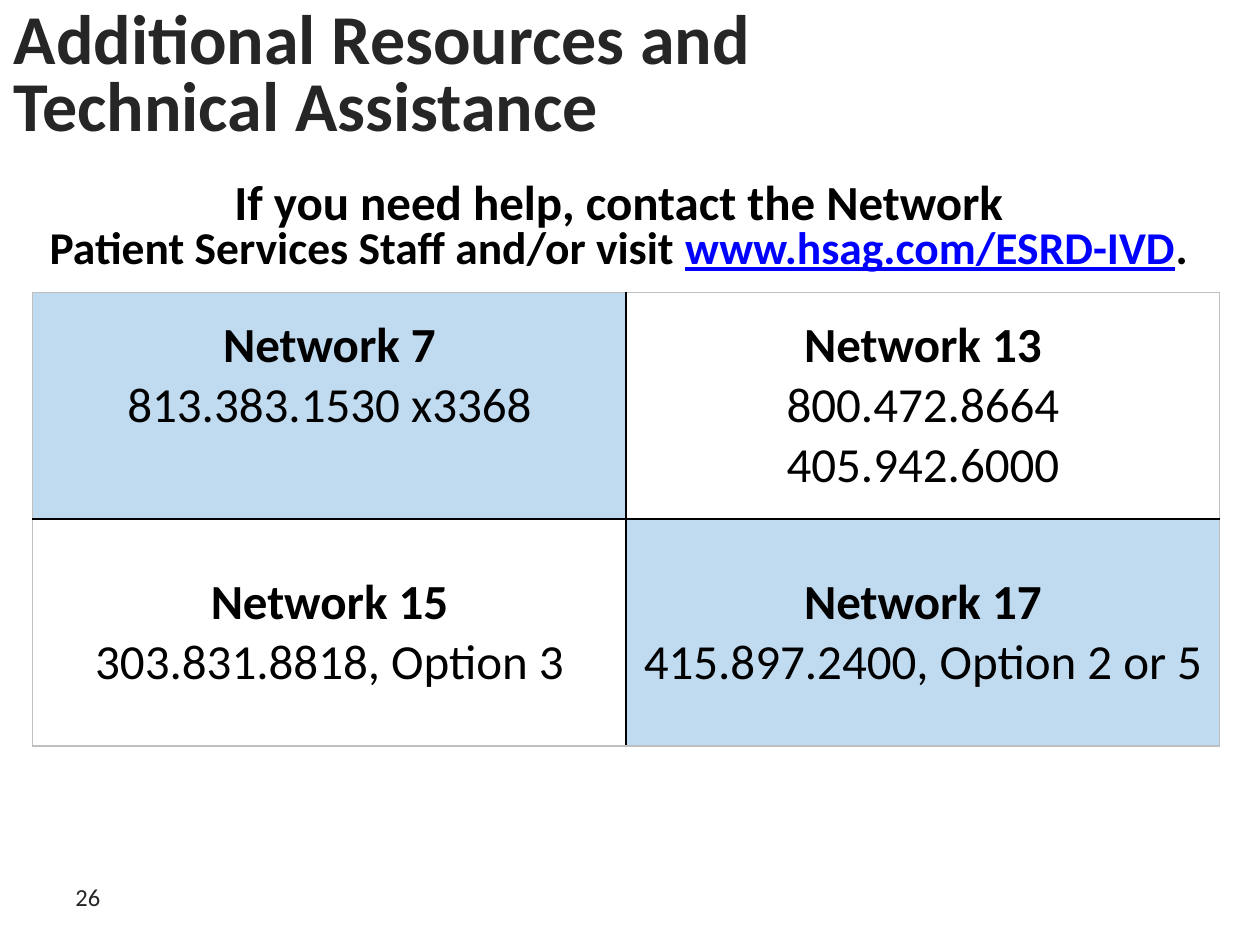
from dataclasses import dataclass

from lxml import etree
from pptx import Presentation
from pptx import util as u
from pptx.dml.color import RGBColor
from pptx.enum import text
from pptx.oxml.ns import qn


@dataclass(frozen=True)
class Theme:
    font: str = "Calibri"
    dark: str = "262626"
    black: str = "000000"
    link: str = "0000FF"
    tint: str = "C0DAEF"
    frame: str = "BFBFBF"
    title_size: int = 40
    body_size: int = 28
    intro_size: int = 26
    number_size: int = 14
    line_space: float = 0.8


class SlideBuilder:
    def __init__(self, page, theme):
        self.page = page
        self.theme = theme

    def style(self, font, size, color, bold=False, underline=False):
        font.name = self.theme.font
        font.size = u.Pt(size)
        font.color.rgb = RGBColor.from_string(color)
        font.bold = bold
        font.underline = underline

    def text_box(self, left, top, width, height, anchor):
        box = self.page.shapes.add_textbox(
            u.Inches(left), u.Inches(top), u.Inches(width), u.Inches(height))
        frame = box.text_frame
        frame.word_wrap = True
        frame.vertical_anchor = anchor
        return frame

    def label(self, content, place, size, bold=False, spacing=None, inset=0.1):
        frame = self.text_box(*place, text.MSO_ANCHOR.MIDDLE)
        frame.margin_left = frame.margin_right = u.Inches(inset)
        frame.text = content
        para = frame.paragraphs[0]
        para.line_spacing = spacing
        for span in para.runs:
            self.style(span.font, size, self.theme.dark, bold)

    def rich_lines(self, lines, place):
        """Centred bold lines, each a list of (text, size, color, underline)."""
        para = self.text_box(*place, text.MSO_ANCHOR.TOP).paragraphs[0]
        para.alignment = text.PP_ALIGN.CENTER
        para.line_spacing = self.theme.line_space
        for index, line in enumerate(lines):
            if index:
                para.add_line_break()
            for content, size, color, underline in line:
                span = para.add_run()
                span.text = content
                self.style(span.font, size, color, True, underline)

    def border(self, cell, side, color):
        line = etree.SubElement(cell._tc.get_or_add_tcPr(), qn(f"a:{side}"),
                                w=str(u.Pt(1)))
        fill = etree.SubElement(line, qn("a:solidFill"))
        etree.SubElement(fill, qn("a:srgbClr"), val=color)

    def contact_cell(self, cell, lines, tinted, inner_sides, blank_below):
        theme = self.theme
        # Borders come before the fill in the cell properties
        for side in ("lnL", "lnR", "lnT", "lnB"):
            self.border(cell, side,
                        theme.black if side in inner_sides else theme.frame)
        if tinted:
            cell.fill.solid()
            cell.fill.fore_color.rgb = RGBColor.from_string(theme.tint)
        else:
            cell.fill.background()
        cell.vertical_anchor = text.MSO_ANCHOR.MIDDLE
        cell.margin_bottom = u.Inches(0.05 + blank_below)
        cell.text_frame.text = "\n".join(lines)
        for index, para in enumerate(cell.text_frame.paragraphs):
            para.alignment = text.PP_ALIGN.CENTER
            for span in para.runs:
                self.style(span.font, theme.body_size, theme.black, index == 0)

    def contact_table(self, rows, left, top, width, height):
        table = self.page.shapes.add_table(
            len(rows), len(rows[0]), u.Inches(left), u.Inches(top),
            u.Inches(width), u.Inches(height)).table
        table.first_row = table.horz_banding = False
        most_in_row = [max(len(lines) for lines in row) for row in rows]
        line_height = self.theme.body_size * 1.22 / 72
        for r, row in enumerate(rows):
            for c, lines in enumerate(row):
                inner = {"lnT" if r else "lnB", "lnL" if c else "lnR"}
                # Shorter cells keep their heading level with the row
                missing = most_in_row[r] - len(lines)
                self.contact_cell(table.cell(r, c), lines, (r + c) % 2 == 0,
                                  inner, missing * line_height)


def main():
    theme = Theme()
    deck = Presentation()
    deck.slide_width, deck.slide_height = u.Inches(10), u.Inches(7.5)
    slide = SlideBuilder(deck.slides.add_slide(deck.slide_layouts[6]), theme)

    # Title
    slide.label("Additional Resources and \vTechnical Assistance",
                (0.11, 0.08, 9.5, 1.08), theme.title_size, bold=True,
                spacing=theme.line_space, inset=0)

    # Contact table
    slide.contact_table([
        [["Network 7", "813.383.1530 x3368"],
         ["Network 13", "800.472.8664", "405.942.6000"]],
        [["Network 15", "303.831.8818, Option 3"],
         ["Network 17", "415.897.2400, Option 2 or 5"]],
    ], 0.26, 2.32, 9.42, 3.6)

    # Page number
    slide.label("26", (0.5, 6.83, 0.83, 0.58), theme.number_size)

    # Introduction
    slide.rich_lines([
        [("If you need help, contact the Network",
          theme.body_size, theme.black, False)],
        [("Patient Services Staff and/or visit ",
          theme.intro_size, theme.black, False),
         ("www.hsag.com/ESRD-IVD", theme.intro_size, theme.link, True),
         (".", theme.intro_size, theme.black, False)],
    ], (0.2, 1.4, 9.42, 1.3))

    deck.save("out.pptx")


if __name__ == "__main__":
    main()
